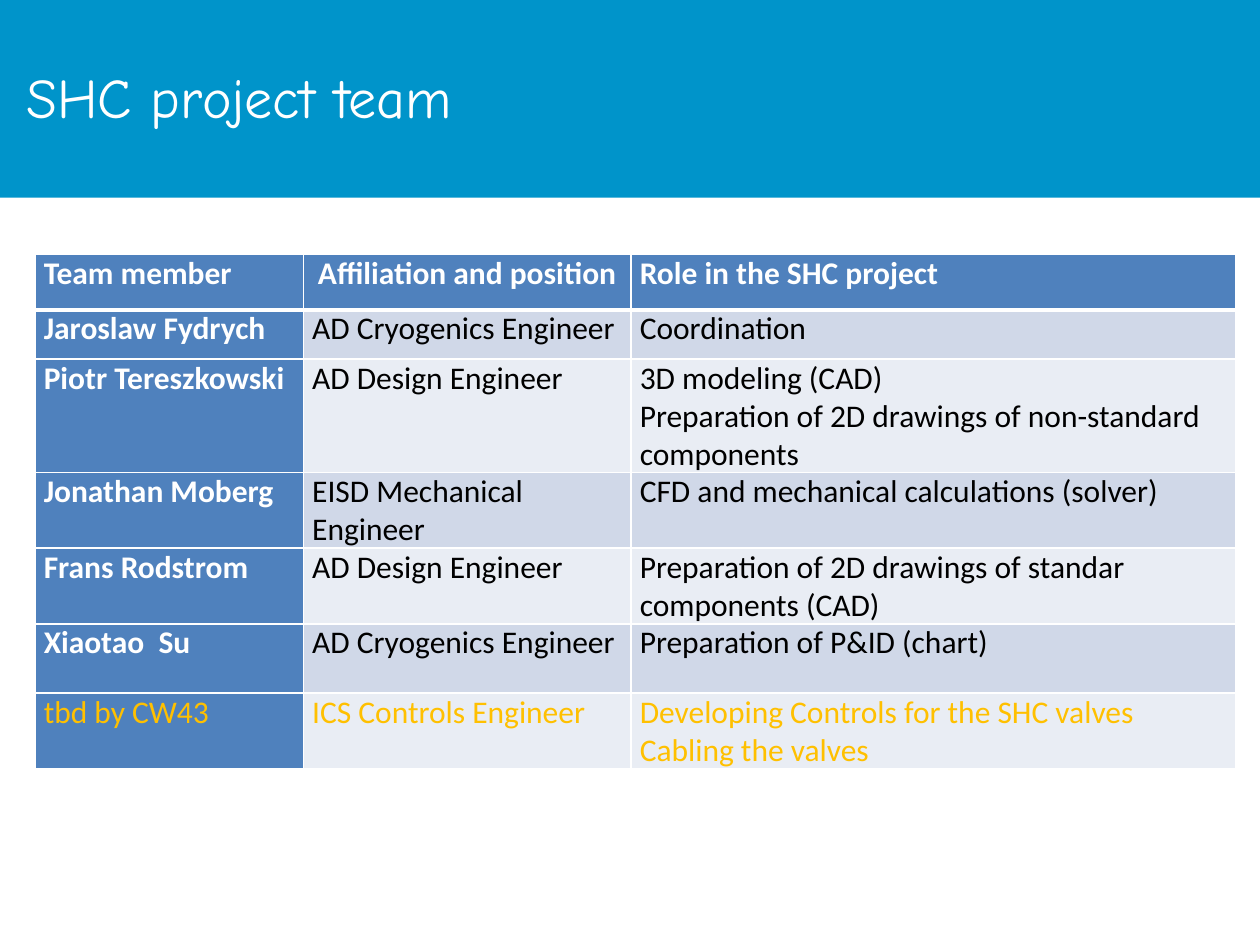
from lxml import etree
from pptx import Presentation
from pptx.dml.color import RGBColor
from pptx.enum import shapes, text
from pptx.oxml.ns import qn
from pptx.util import Pt

HUES = {
    "band": "0094CA", "head": "4F81BD", "odd": "D0D8E8", "even": "E9EDF4",
    "white": "FFFFFF", "black": "000000", "open": "FFC000",
}
COLS = [153.4, 187.2, 345.6]
TALL = [31.7, 28.1, 39.6, 33.8, 34.6, 39.6, 39.6]
TEAM = [
    ("Team member", "Affiliation and position", "Role in the SHC project"),
    ("Jaroslaw Fydrych", "AD Cryogenics Engineer", "Coordination"),
    ("Piotr Tereszkowski", "AD Design Engineer",
     "3D modeling (CAD)\vPreparation of 2D drawings of non-standard components"),
    ("Jonathan Moberg", "EISD Mechanical Engineer",
     "CFD and mechanical calculations (solver)"),
    ("Frans Rodstrom", "AD Design Engineer",
     "Preparation of 2D drawings of standar components (CAD)"),
    ("Xiaotao  Su", "AD Cryogenics Engineer", "Preparation of P&ID (chart)"),
    ("tbd by CW43", "ICS Controls Engineer",
     "Developing Controls for the SHC valves\vCabling the valves"),
]


def paint(fill, hue):
    fill.solid()
    fill.fore_color.rgb = RGBColor.from_string(HUES[hue])


def write(frame, words, size=18, face="Calibri", hue="black", bold=False,
          align=text.PP_ALIGN.LEFT):
    """Fill a text frame; a vertical tab in words makes a line break."""
    frame.word_wrap = True
    para = frame.paragraphs[0]
    para.text = words
    para.alignment = align
    for run in para.runs:
        font = run.font
        font.size, font.name, font.bold = Pt(size), face, bold
        font.color.rgb = RGBColor.from_string(HUES[hue])


def edge(cell, side, width):
    props = cell._tc.get_or_add_tcPr()
    line = etree.SubElement(props, qn("a:ln" + side), w=str(Pt(width)))
    fill = etree.SubElement(line, qn("a:solidFill"))
    etree.SubElement(fill, qn("a:srgbClr"), val=HUES["white"])


class Page:
    """Holds the title style and the slide being built."""

    def __init__(self, slide, face="Comic Neue", size=32):
        self.slide, self.face, self.size = slide, face, size

    def band(self, *box):
        shape = self.slide.shapes.add_shape(
            shapes.MSO_SHAPE.RECTANGLE, *map(Pt, box))
        shape.shadow.inherit = False
        paint(shape.fill, "band")
        shape.line.fill.background()

    def title(self, words, *box):
        frame = self.slide.shapes.add_textbox(*map(Pt, box)).text_frame
        frame.vertical_anchor = text.MSO_ANCHOR.MIDDLE
        write(frame, words, size=self.size, face=self.face, hue="white")

    def table(self, rows, left, top):
        grid = self.slide.shapes.add_table(
            len(rows), len(COLS), Pt(left), Pt(top),
            Pt(sum(COLS)), Pt(sum(TALL))).table
        for col, width in zip(grid.columns, COLS):
            col.width = Pt(width)
        for row, height in zip(grid.rows, TALL):
            row.height = Pt(height)
        for r, row in enumerate(rows):
            for c, words in enumerate(row):
                self.cell(grid.cell(r, c), words, r, c, r == len(rows) - 1)

    def cell(self, cell, words, r, c, vacant):
        key = r == 0 or c == 0
        cell.margin_left = cell.margin_right = Pt(5)
        cell.margin_top = cell.margin_bottom = 0
        for side in "LRTB":
            thick = (r == 0 and side == "B") or (r == 1 and side == "T")
            edge(cell, side, 3 if thick else 1)
        paint(cell.fill, "head" if key else "odd" if r % 2 else "even")
        write(cell.text_frame, words, bold=key and not vacant,
              hue="open" if vacant else "white" if key else "black",
              align=text.PP_ALIGN.CENTER if (r, c) == (0, 1)
              else text.PP_ALIGN.LEFT)


def main():
    deck = Presentation()
    deck.slide_width, deck.slide_height = Pt(720), Pt(540)
    page = Page(deck.slides.add_slide(deck.slide_layouts[6]))
    page.band(0, 0, 720, 113)
    page.title("SHC project team", 8, 5, 705, 100)
    page.table(TEAM, 20, 145.4)
    deck.save("out.pptx")


if __name__ == "__main__":
    main()
